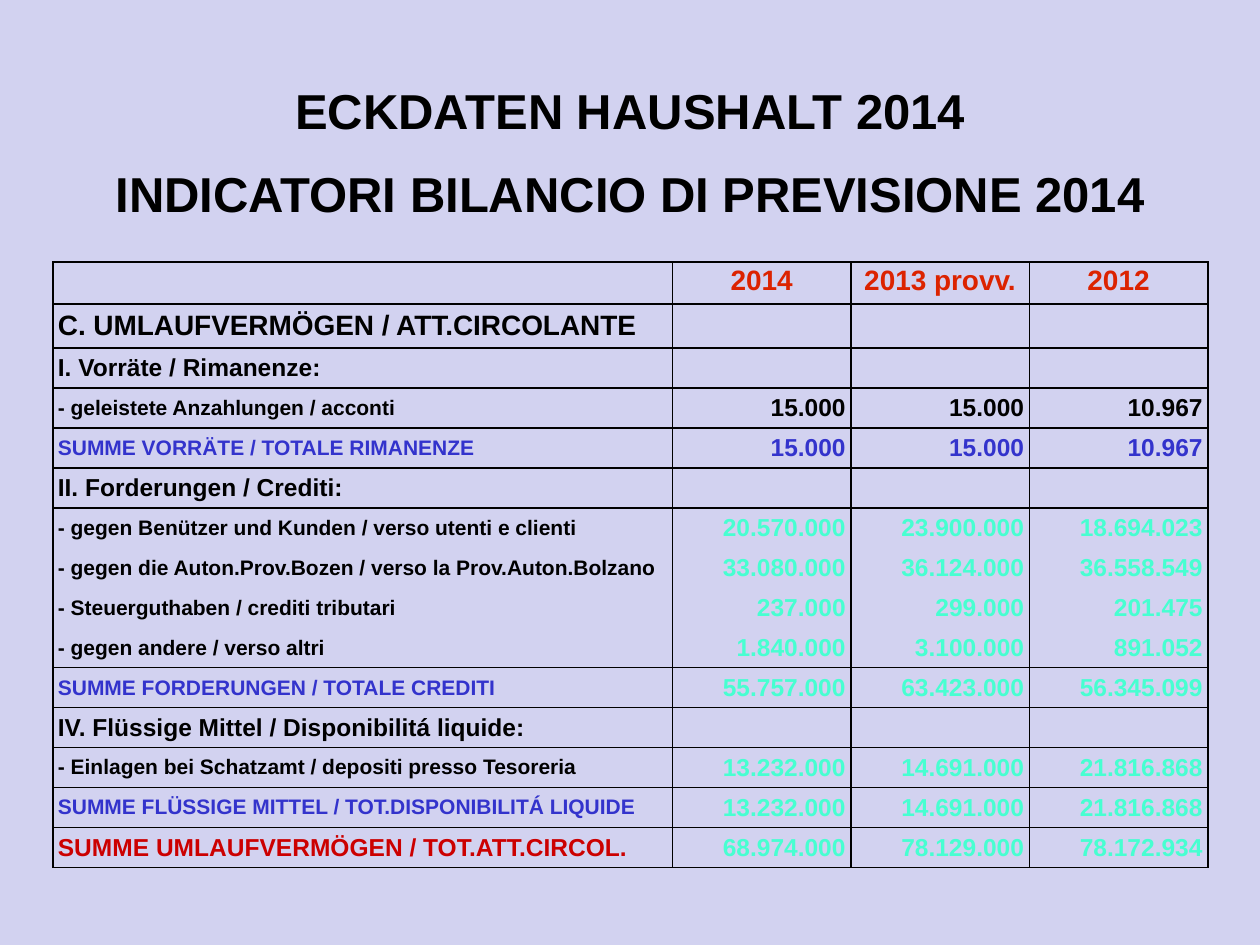
from dataclasses import dataclass
from enum import Enum

from lxml.etree import SubElement as Sub
from pptx import Presentation
from pptx.dml.color import RGBColor as Rgb
from pptx.enum.text import MSO_ANCHOR as Anchor, MSO_AUTO_SIZE as Fit, PP_ALIGN as Align
from pptx.oxml.ns import qn
from pptx.util import Pt


@dataclass(frozen=True)
class Theme:
    font: str = "Arial"
    back: str = "D2D2F0"
    ink: str = "000000"
    head: str = "DC2300"
    sum: str = "3333CC"
    total: str = "CC0000"
    mint: str = "47FFD1"
    title: float = 28
    large: float = 16
    mid: float = 14
    small: float = 12


THEME = Theme()


class Kind(Enum):
    """Label size and colour of each sort of row."""
    HEAD = (THEME.large, THEME.head)
    PART = (THEME.large, THEME.ink)
    GROUP = (THEME.mid, THEME.ink)
    ITEM = (THEME.small, THEME.ink)
    SUM = (THEME.small, THEME.sum)
    TOTAL = (THEME.mid, THEME.total)


@dataclass(frozen=True)
class Row:
    kind: Kind
    label: str
    values: tuple = ("", "", "")
    color: str = THEME.mint
    height: float = 22.85


TITLE = ("ECKDATEN HAUSHALT 2014", "INDICATORI BILANCIO DI PREVISIONE 2014")
COLS = (354, 102, 102, 102)
ROWS = (
    Row(Kind.HEAD, "", ("2014", "2013 provv.", "2012"), THEME.head, 24),
    Row(Kind.PART, "C. UMLAUFVERMÖGEN / ATT.CIRCOLANTE", height=25),
    Row(Kind.GROUP, "I. Vorräte / Rimanenze:"),
    Row(Kind.ITEM, "- geleistete Anzahlungen / acconti",
        ("15.000", "15.000", "10.967"), THEME.ink),
    Row(Kind.SUM, "SUMME VORRÄTE / TOTALE RIMANENZE",
        ("15.000", "15.000", "10.967"), THEME.sum),
    Row(Kind.GROUP, "II. Forderungen / Crediti:"),
    Row(Kind.ITEM, "- gegen Benützer und Kunden / verso utenti e clienti",
        ("20.570.000", "23.900.000", "18.694.023")),
    Row(Kind.ITEM, "- gegen die Auton.Prov.Bozen / verso la Prov.Auton.Bolzano",
        ("33.080.000", "36.124.000", "36.558.549")),
    Row(Kind.ITEM, "- Steuerguthaben / crediti tributari",
        ("237.000", "299.000", "201.475")),
    Row(Kind.ITEM, "- gegen andere / verso altri",
        ("1.840.000", "3.100.000", "891.052")),
    Row(Kind.SUM, "SUMME FORDERUNGEN / TOTALE CREDITI",
        ("55.757.000", "63.423.000", "56.345.099")),
    Row(Kind.GROUP, "IV. Flüssige Mittel / Disponibilitá liquide:"),
    Row(Kind.ITEM, "- Einlagen bei Schatzamt / depositi presso Tesoreria",
        ("13.232.000", "14.691.000", "21.816.868")),
    Row(Kind.SUM, "SUMME FLÜSSIGE MITTEL / TOT.DISPONIBILITÁ LIQUIDE",
        ("13.232.000", "14.691.000", "21.816.868")),
    Row(Kind.TOTAL, "SUMME UMLAUFVERMÖGEN / TOT.ATT.CIRCOL.",
        ("68.974.000", "78.129.000", "78.172.934")),
)


def style(para, size: float, color: str, align) -> None:
    para.alignment = align
    for run in para.runs:
        font = run.font
        font.name, font.size, font.bold = THEME.font, Pt(size), True
        font.color.rgb = Rgb.from_string(color)


def add_title(slide) -> None:
    shape = slide.shapes.title
    shape.left, shape.top = Pt(56), Pt(43.2)
    shape.width, shape.height = Pt(608), Pt(87.2)
    frame = shape.text_frame
    frame.text = "\n".join(TITLE)
    frame.word_wrap, frame.auto_size = False, Fit.NONE
    frame.vertical_anchor = Anchor.BOTTOM
    for para in frame.paragraphs:
        style(para, THEME.title, THEME.ink, Align.CENTER)
        para.line_spacing, para.space_before = 1.0, Pt(0)
    frame.paragraphs[-1].space_before = Pt(13.5)


def add_lines(cell, sides: str) -> None:
    """Rule the given sides, a string of letters out of L, R, T and B."""
    props = cell._tc.get_or_add_tcPr()
    for spot, side in enumerate(sides):
        line = Sub(props, qn(f"a:ln{side}"), w=str(Pt(1)))
        fill = Sub(line, qn("a:solidFill"))
        Sub(fill, qn("a:srgbClr"), val=THEME.ink)
        props.insert(spot, line)  # lines come before the fill


def fill_cell(cell, text: str, size: float, color: str, align) -> None:
    cell.fill.background()
    cell.vertical_anchor = Anchor.MIDDLE
    cell.margin_left = cell.margin_right = Pt(2.9)
    cell.margin_top = cell.margin_bottom = Pt(2.9)
    cell.text_frame.text = text
    para = cell.text_frame.paragraphs[0]
    style(para, size, color, align)
    if not text:  # keeps an empty cell from stretching its row
        para._p.get_or_add_endParaRPr().set("sz", str(int(THEME.small * 100)))


def add_table(slide) -> None:
    high = sum(row.height for row in ROWS)
    frame = slide.shapes.add_table(len(ROWS), len(COLS), Pt(30.2), Pt(149.8),
                                   Pt(sum(COLS)), Pt(high))
    table = frame.table
    table.first_row = table.horz_banding = False
    plain = "{2D5ABB26-0587-4C30-8999-92F81FD0307C}"
    table._tbl.tblPr.find(qn("a:tableStyleId")).text = plain
    for col, width in zip(table.columns, COLS):
        col.width = Pt(width)

    for i, row in enumerate(ROWS):
        table.rows[i].height = Pt(row.height)
        size, color = row.kind.value
        head = row.kind is Kind.HEAD
        last = i + 1 == len(ROWS)
        top = "" if row.kind is Kind.ITEM else "T"
        base = "B" if last or ROWS[i + 1].kind is not Kind.ITEM else ""
        for j, text in enumerate((row.label, *row.values)):
            cell = table.cell(i, j)
            if j == 0:
                fill_cell(cell, text, size, color, Align.LEFT)
            elif head:
                fill_cell(cell, text, size, row.color, Align.CENTER)
                para = cell.text_frame.paragraphs[0]
                para.line_spacing, para.space_before = 0.81, Pt(8)
            else:
                fill_cell(cell, text, THEME.mid, row.color, Align.RIGHT)
            add_lines(cell, "LR" + top + base)


def main() -> None:
    deck = Presentation()
    deck.slide_width, deck.slide_height = Pt(720), Pt(540)
    slide = deck.slides.add_slide(deck.slide_layouts[5])
    fill = slide.background.fill
    fill.solid()
    fill.fore_color.rgb = Rgb.from_string(THEME.back)
    add_title(slide)
    add_table(slide)
    deck.save("out.pptx")


if __name__ == "__main__":
    main()
